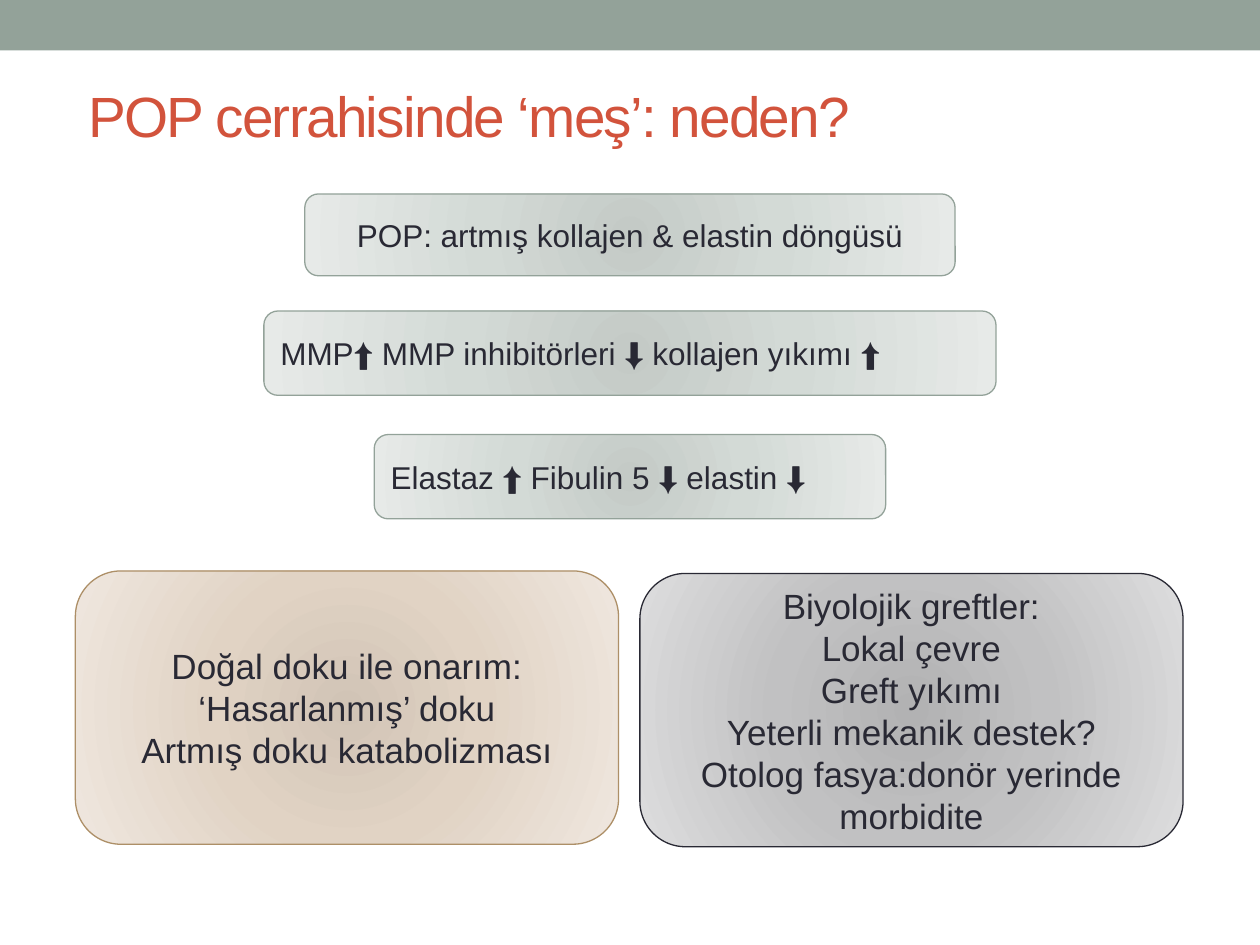
from dataclasses import dataclass

from pptx import Presentation
from pptx.dml.color import RGBColor
from pptx.enum.shapes import MSO_SHAPE
from pptx.enum.text import MSO_ANCHOR, MSO_AUTO_SIZE, PP_ALIGN
from pptx.oxml import parse_xml
from pptx.oxml.ns import nsdecls
from pptx.slide import Slide
from pptx.util import Cm, Pt

PAGE_WIDTH, PAGE_HEIGHT = 25.4, 19.05
FONT = "Arial"
SAGE = RGBColor(0x93, 0xA2, 0x99)
RED = RGBColor(0xD2, 0x53, 0x3C)
BROWN = RGBColor(0xAD, 0x8F, 0x67)
INK = RGBColor(0x29, 0x29, 0x34)


@dataclass(frozen=True)
class Palette:
    line: RGBColor
    inner: RGBColor
    middle: RGBColor
    outer: RGBColor


GREEN_GLOW = Palette(SAGE, RGBColor(0xC4, 0xCA, 0xC6),
                     RGBColor(0xD3, 0xDA, 0xD6), RGBColor(0xE7, 0xEA, 0xE8))
SAND_GLOW = Palette(BROWN, RGBColor(0xD1, 0xC4, 0xB6),
                    RGBColor(0xE1, 0xD3, 0xC4), RGBColor(0xEF, 0xE7, 0xDF))
GREY_GLOW = Palette(INK, RGBColor(0xB2, 0xB2, 0xB3),
                    RGBColor(0xC1, 0xC1, 0xC2), RGBColor(0xDD, 0xDD, 0xDE))


@dataclass(frozen=True)
class Panel:
    """A rounded box, in centimetres; without a left edge it is centred."""
    top: float
    width: float
    height: float
    lines: tuple[str, ...]
    palette: Palette = GREEN_GLOW
    size: int = 18
    align: PP_ALIGN = PP_ALIGN.LEFT
    left: float | None = None


REPAIR_WIDTH, REPAIR_HEIGHT = 10.95, 5.51
PANELS = (
    Panel(11.51, REPAIR_WIDTH, REPAIR_HEIGHT,
          ("Doğal doku ile onarım:", "‘Hasarlanmış’ doku",
           "Artmış doku katabolizması"),
          SAND_GLOW, 20, PP_ALIGN.CENTER, left=1.52),
    Panel(3.91, 13.11, 1.65, ("POP: artmış kollajen & elastin döngüsü",),
          align=PP_ALIGN.CENTER),
    Panel(6.27, 14.76, 1.7, ("MMP⬆ MMP inhibitörleri ⬇ kollajen yıkımı ⬆",)),
    Panel(8.76, 10.31, 1.7, ("Elastaz ⬆ Fibulin 5 ⬇ elastin ⬇",)),
    Panel(11.56, REPAIR_WIDTH, REPAIR_HEIGHT,
          ("Biyolojik greftler:", "Lokal çevre", "Greft yıkımı",
           "Yeterli mekanik destek?", "Otolog fasya:donör yerinde morbidite"),
          GREY_GLOW, 20, PP_ALIGN.CENTER, left=12.9),
)


def radial_fill(palette: Palette):
    stops = "".join(
        f'<a:gs pos="{percent * 1000}"><a:srgbClr val="{color}"/></a:gs>'
        for percent, color in ((0, palette.inner), (45, palette.middle),
                               (100, palette.outer)))
    return parse_xml(
        f'<a:gradFill {nsdecls("a")} rotWithShape="1"><a:gsLst>{stops}</a:gsLst>'
        '<a:path path="circle"><a:fillToRect l="100000" t="100000" '
        'r="100000" b="100000"/></a:path></a:gradFill>')


def add_top_bar(page: Slide) -> None:
    bar = page.shapes.add_shape(MSO_SHAPE.RECTANGLE, 0, 0,
                                Cm(PAGE_WIDTH), Cm(1.02))
    bar.shadow.inherit = False
    bar.fill.solid()
    bar.fill.fore_color.rgb = SAGE
    bar.line.fill.background()


def set_title(page: Slide, text: str) -> None:
    title = page.shapes.title
    title.left, title.top = Cm(1.52), Cm(0.3)
    title.width, title.height = Cm(22.35), Cm(2.7)
    frame = title.text_frame
    frame.auto_size = MSO_AUTO_SIZE.NONE
    frame.vertical_anchor = MSO_ANCHOR.BOTTOM
    frame.margin_bottom = 0
    para = frame.paragraphs[0]
    para.alignment = PP_ALIGN.LEFT
    span = para.add_run()
    span.text = text
    span.font.name, span.font.size = FONT, Pt(32.4)
    span.font.color.rgb = RED
    span.font._element.set("spc", "-100")


def add_panel(page: Slide, panel: Panel) -> None:
    left = (PAGE_WIDTH - panel.width) / 2 if panel.left is None else panel.left
    box = page.shapes.add_shape(MSO_SHAPE.ROUNDED_RECTANGLE, Cm(left),
                                Cm(panel.top), Cm(panel.width), Cm(panel.height))
    box.shadow.inherit = False
    box.line.color.rgb = panel.palette.line
    box.line.width = Pt(0.75)
    geometry = box._element.spPr.prstGeom
    geometry.addnext(radial_fill(panel.palette))
    frame = box.text_frame
    frame.word_wrap = True
    frame.vertical_anchor = MSO_ANCHOR.MIDDLE
    frame.text = "\n".join(panel.lines)
    for para in frame.paragraphs:
        para.alignment = panel.align
        para.font.name, para.font.size = FONT, Pt(panel.size)
        para.font.color.rgb = INK


def main() -> None:
    deck = Presentation()
    deck.slide_width, deck.slide_height = Cm(PAGE_WIDTH), Cm(PAGE_HEIGHT)
    page = deck.slides.add_slide(deck.slide_layouts.get_by_name("Title Only"))
    add_top_bar(page)
    set_title(page, "POP cerrahisinde ‘meş’: neden?")
    for panel in PANELS:
        add_panel(page, panel)
    deck.save("out.pptx")


if __name__ == "__main__":
    main()
